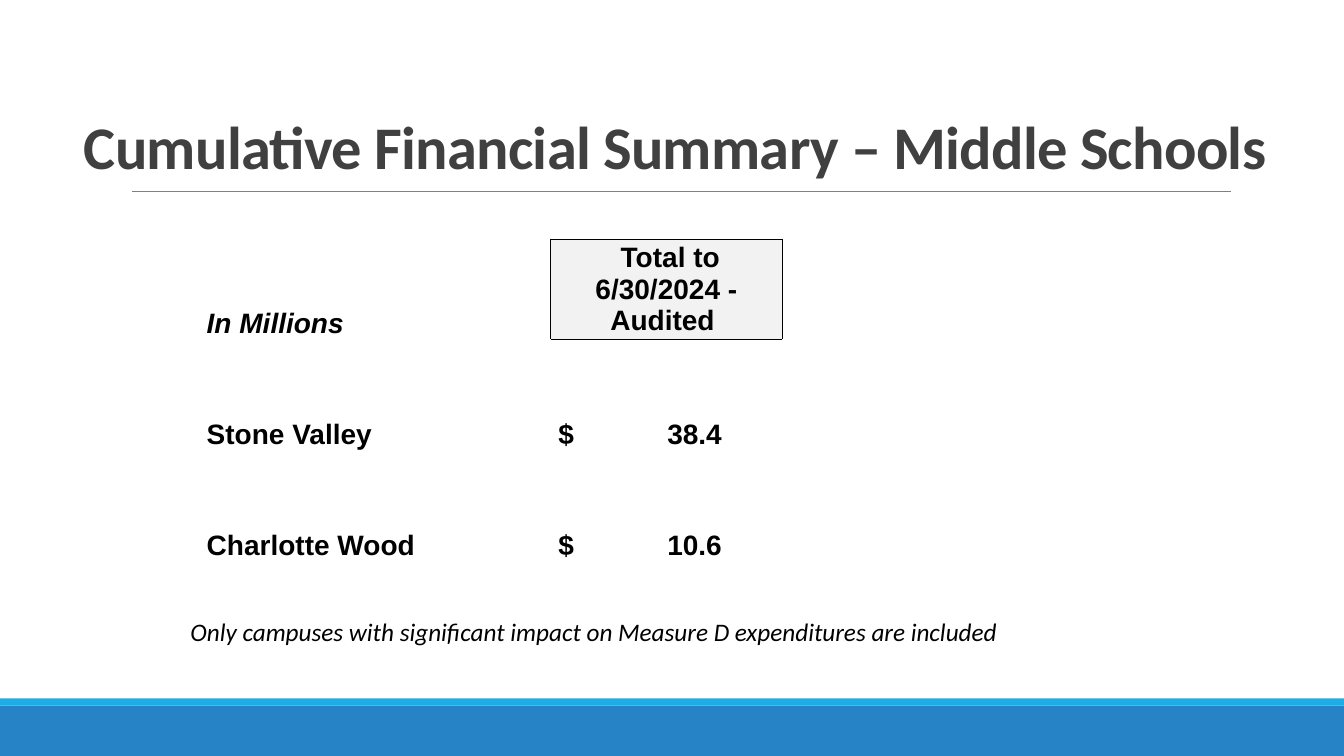
from lxml.etree import SubElement
from pptx import Presentation
from pptx.dml.color import RGBColor
from pptx.enum.shapes import MSO_CONNECTOR, MSO_SHAPE
from pptx.enum.text import MSO_ANCHOR, MSO_AUTO_SIZE, PP_ALIGN
from pptx.oxml.ns import qn
from pptx.util import Inches, Pt

COLORS = {
    "band": "2683C6",
    "stripe": "1CADE4",
    "rule": "808080",
    "title": "404040",
    "text": "000000",
    "header": "F2F2F2",
}
SCHOOLS = [("Stone Valley", "38.4"), ("Charlotte Wood", "10.6")]


def color(name):
    return RGBColor.from_string(COLORS[name])


def add_run(p, text, font, size, fill="text", bold=False, italic=False):
    r = p.add_run()
    r.text = text
    r.font.name = font
    r.font.size = Pt(size)
    r.font.bold = bold
    r.font.italic = italic
    r.font.color.rgb = color(fill)
    return r


def add_band(slide, top, height, fill):
    sp = slide.shapes.add_shape(
        MSO_SHAPE.RECTANGLE, 0, Inches(top), Inches(13.33), Inches(height))
    sp.shadow.inherit = False
    sp.fill.solid()
    sp.fill.fore_color.rgb = color(fill)
    sp.line.fill.background()


def add_rule(slide, left, right, y):
    line = slide.shapes.add_connector(
        MSO_CONNECTOR.STRAIGHT, Inches(left), Inches(y), Inches(right), Inches(y))
    line.line.color.rgb = color("rule")
    line.line.width = Pt(0.5)
    SubElement(line._element.spPr, qn("a:effectLst"))


def set_title(slide, text):
    sp = slide.shapes.title
    sp.left, sp.top = Inches(0.52), Inches(0.4)
    sp.width, sp.height = Inches(12.35), Inches(1.45)
    tf = sp.text_frame
    tf.auto_size = MSO_AUTO_SIZE.NONE
    tf.vertical_anchor = MSO_ANCHOR.BOTTOM
    p = tf.paragraphs[0]
    p.alignment = PP_ALIGN.CENTER
    p.line_spacing = 0.85
    r = add_run(p, text, "Calibri", 43.2, "title", bold=True)
    r._r.get_or_add_rPr().set("spc", "-50")


def add_note(slide, text):
    sp = slide.shapes.add_textbox(
        Inches(1.79), Inches(6.07), Inches(8.45), Inches(0.4))
    tf = sp.text_frame
    tf.word_wrap = True
    add_run(tf.paragraphs[0], text, "Calibri", 18, italic=True)


def set_borders(cell, sides):
    tcPr = cell._tc.get_or_add_tcPr()
    for i, side in enumerate(sides):
        ln = SubElement(tcPr, qn(f"a:ln{side}"), w=str(Pt(0.5)))
        fill = SubElement(ln, qn("a:solidFill"))
        SubElement(fill, qn("a:srgbClr"), val=COLORS["text"])
        tcPr.insert(i, ln)


def fill_cell(cell, text, italic=False):
    cell.margin_left = cell.margin_right = cell.margin_top = cell.margin_bottom = 0
    cell.vertical_anchor = MSO_ANCHOR.BOTTOM
    cell.fill.background()
    p = cell.text_frame.paragraphs[0]
    add_run(p, text, "Arial", 20, bold=True, italic=italic)
    return p


def add_amount_tab(p, position):
    tabs = SubElement(p._p.get_or_add_pPr(), qn("a:tabLst"))
    SubElement(tabs, qn("a:tab"), pos=str(Inches(position)), algn="r")


def add_totals(slide):
    frame = slide.shapes.add_table(
        1 + len(SCHOOLS), 2, Inches(2.05), Inches(2.37), Inches(5.71), Inches(3.2))
    table = frame.table
    table.first_row = table.horz_banding = False
    for column, width in zip(table.columns, (3.41, 2.3)):
        column.width = Inches(width)
    for row, height in zip(table.rows, (1, 1.1, 1.1)):
        row.height = Inches(height)

    fill_cell(table.cell(0, 0), "In Millions", italic=True)
    header = table.cell(0, 1)
    fill_cell(header, " Total to 6/30/2024 - Audited ").alignment = PP_ALIGN.CENTER
    header.vertical_anchor = MSO_ANCHOR.MIDDLE
    header.fill.solid()
    header.fill.fore_color.rgb = color("header")

    for i, (school, amount) in enumerate(SCHOOLS, 1):
        fill_cell(table.cell(i, 0), school)
        add_amount_tab(fill_cell(table.cell(i, 1), f" $\t{amount}"), 1.7)

    set_borders(header, "LRTB")
    set_borders(table.cell(0, 0), "R")
    set_borders(table.cell(1, 1), "T")


def main():
    prs = Presentation()
    prs.slide_width, prs.slide_height = Inches(13.33), Inches(7.5)
    slide = prs.slides.add_slide(prs.slide_layouts[5])
    add_band(slide, 7, 0.5, "band")
    add_band(slide, 6.93, 0.07, "stripe")
    add_rule(slide, 1.31, 12.21, 1.9)
    set_title(slide, "Cumulative Financial Summary – Middle Schools")
    add_note(slide, "Only campuses with significant impact on Measure D expenditures are included")
    add_totals(slide)
    prs.save("out.pptx")


if __name__ == "__main__":
    main()
